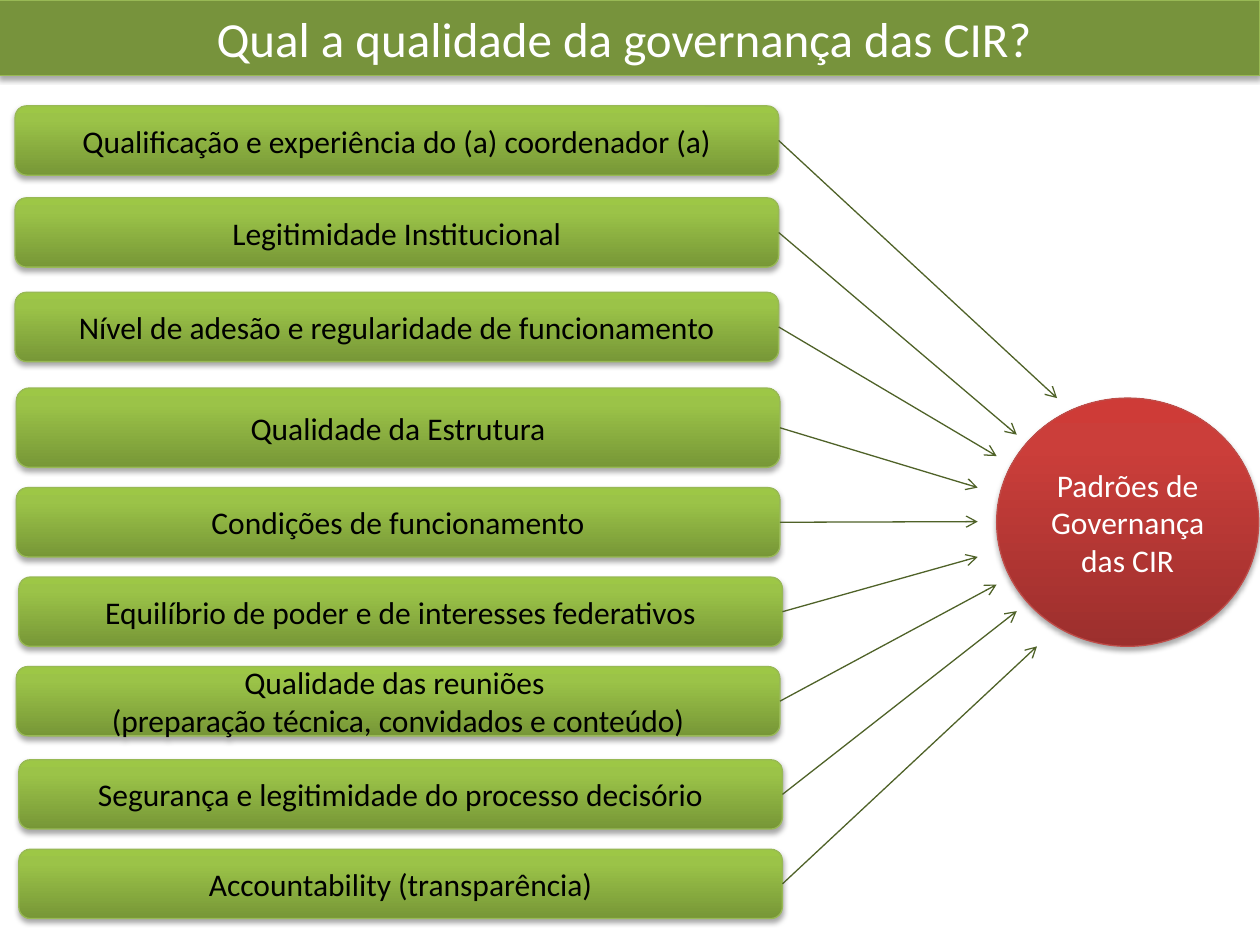
from copy import deepcopy

from pptx import Presentation
from pptx import util as u
from pptx.dml.color import RGBColor
from pptx.enum import shapes, text
from pptx.oxml import parse_xml
from pptx.oxml.ns import nsdecls, qn

COLOURS = {
    "banner": "77933C",
    "green_line": "98B955",
    "red_line": "BF4C48",
    "arrow": "4F6228",
    "black": "000000",
    "white": "FFFFFF",
}
GREEN_GRADIENT = ((0, "779737"), (0.8, "9BC348"), (1, "9DC746"))
RED_GRADIENT = ((0, "9C2F2D"), (0.8, "CB3E3A"), (1, "CE3B37"))

BOX_WIDTH, BOX_HEIGHT = 6.06, 0.55
CRITERIA = [
    (0.12, 0.84, BOX_HEIGHT, ["Qualificação e experiência do (a) coordenador (a)"], (8.39, 3.16)),
    (0.12, 1.57, BOX_HEIGHT, ["Legitimidade Institucional"], (8.07, 3.45)),
    (0.12, 2.32, BOX_HEIGHT, ["Nível de adesão e regularidade de funcionamento"], (7.91, 3.62)),
    (0.13, 3.08, 0.63, ["Qualidade da Estrutura"], (7.76, 3.87)),
    (0.13, 3.87, BOX_HEIGHT, ["Condições de funcionamento"], (7.76, 4.14)),
    (0.15, 4.58, BOX_HEIGHT, ["Equilíbrio de poder e de interesses federativos"], (7.76, 4.42)),
    (0.13, 5.29, BOX_HEIGHT,
     ["Qualidade das reuniões ", "(preparação técnica, convidados e conteúdo)"], (7.91, 4.64)),
    (0.15, 6.03, BOX_HEIGHT, ["Segurança e legitimidade do processo decisório"], (8.07, 4.85)),
    (0.15, 6.74, BOX_HEIGHT, ["Accountability (transparência)"], (8.23, 5.13)),
]


class GovernanceSlide:
    """Holds the style and the current slide, and draws each kind of element."""

    font = "Calibri"
    line_width = u.Pt(0.75)

    def __init__(self, slide):
        self.slide = slide

    def colour(self, name):
        return RGBColor.from_string(COLOURS[name])

    def shadow(self, shape):
        shape.shadow.inherit = False
        effects = shape._element.spPr.find(qn("a:effectLst"))
        effects.append(parse_xml(
            f'<a:outerShdw {nsdecls("a")} blurRad="{u.Pt(3.1)}" dist="{u.Pt(1.8)}" '
            'dir="5400000" rotWithShape="0"><a:srgbClr val="000000">'
            '<a:alpha val="35000"/></a:srgbClr></a:outerShdw>'))

    def gradient(self, shape, stops):
        shape.fill.gradient()
        shape.fill.gradient_angle = 90
        stop_list = shape._element.spPr.find(qn("a:gradFill")).find(qn("a:gsLst"))
        stop_list.append(deepcopy(stop_list[-1]))
        for stop, (position, colour) in zip(shape.fill.gradient_stops, stops):
            stop.position = position
            stop.color.rgb = RGBColor.from_string(colour)

    def label(self, shape, lines, size, colour):
        frame = shape.text_frame
        frame.word_wrap = True
        frame.vertical_anchor = text.MSO_ANCHOR.MIDDLE
        for index, line in enumerate(lines):
            paragraph = frame.add_paragraph() if index else frame.paragraphs[0]
            paragraph.alignment = text.PP_ALIGN.CENTER
            run = paragraph.add_run()
            run.text = line
            run.font.name = self.font
            run.font.size = u.Pt(size)
            run.font.color.rgb = self.colour(colour)

    def shape(self, kind, bounds, line, lines, size, colour):
        shape = self.slide.shapes.add_shape(kind, *map(u.Inches, bounds))
        shape.line.color.rgb = self.colour(line)
        shape.line.width = self.line_width
        self.shadow(shape)
        self.label(shape, lines, size, colour)
        return shape

    def banner(self, title):
        shape = self.shape(shapes.MSO_SHAPE.RECTANGLE, (-0.01, 0, 10.01, 0.6),
                           "green_line", [title], 28, "white")
        shape.fill.solid()
        shape.fill.fore_color.rgb = self.colour("banner")

    def criterion(self, left, top, height, lines):
        shape = self.shape(shapes.MSO_SHAPE.ROUNDED_RECTANGLE, (left, top, BOX_WIDTH, height),
                           "green_line", lines, 18, "black")
        self.gradient(shape, GREEN_GRADIENT)
        return shape

    def result(self, caption):
        shape = self.shape(shapes.MSO_SHAPE.OVAL, (7.91, 3.16, 2.08, 1.97),
                           "red_line", [caption], 18, "white")
        self.gradient(shape, RED_GRADIENT)

    def arrow(self, box, target):
        end = [u.Inches(value) for value in target]
        connector = self.slide.shapes.add_connector(
            shapes.MSO_CONNECTOR.STRAIGHT, box.left + box.width, box.top + box.height // 2, *end)
        connector.begin_connect(box, 3)
        connector.line.color.rgb = self.colour("arrow")
        connector.line.width = self.line_width
        properties = connector._element.spPr
        properties.find(qn("a:ln")).append(
            parse_xml(f'<a:tailEnd {nsdecls("a")} type="arrow"/>'))
        properties.append(parse_xml(f'<a:effectLst {nsdecls("a")}/>'))


def main():
    presentation = Presentation()
    presentation.slide_width = u.Inches(10)
    presentation.slide_height = u.Inches(7.5)
    page = GovernanceSlide(presentation.slides.add_slide(presentation.slide_layouts[6]))

    page.banner("Qual a qualidade da governança das CIR? ")
    boxes = [page.criterion(*criterion[:4]) for criterion in CRITERIA]
    page.result("Padrões de Governança das CIR")
    for box, criterion in zip(boxes, CRITERIA):
        page.arrow(box, criterion[4])

    presentation.save("out.pptx")


if __name__ == "__main__":
    main()
